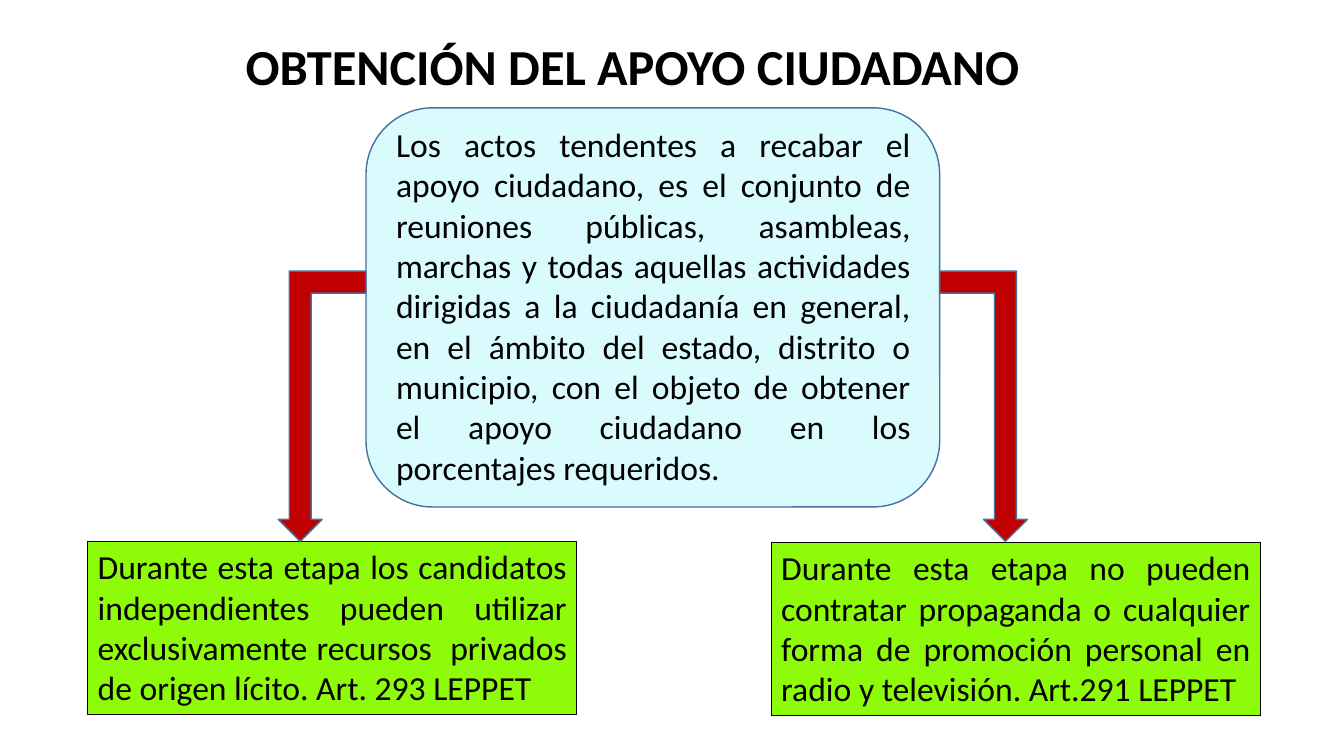
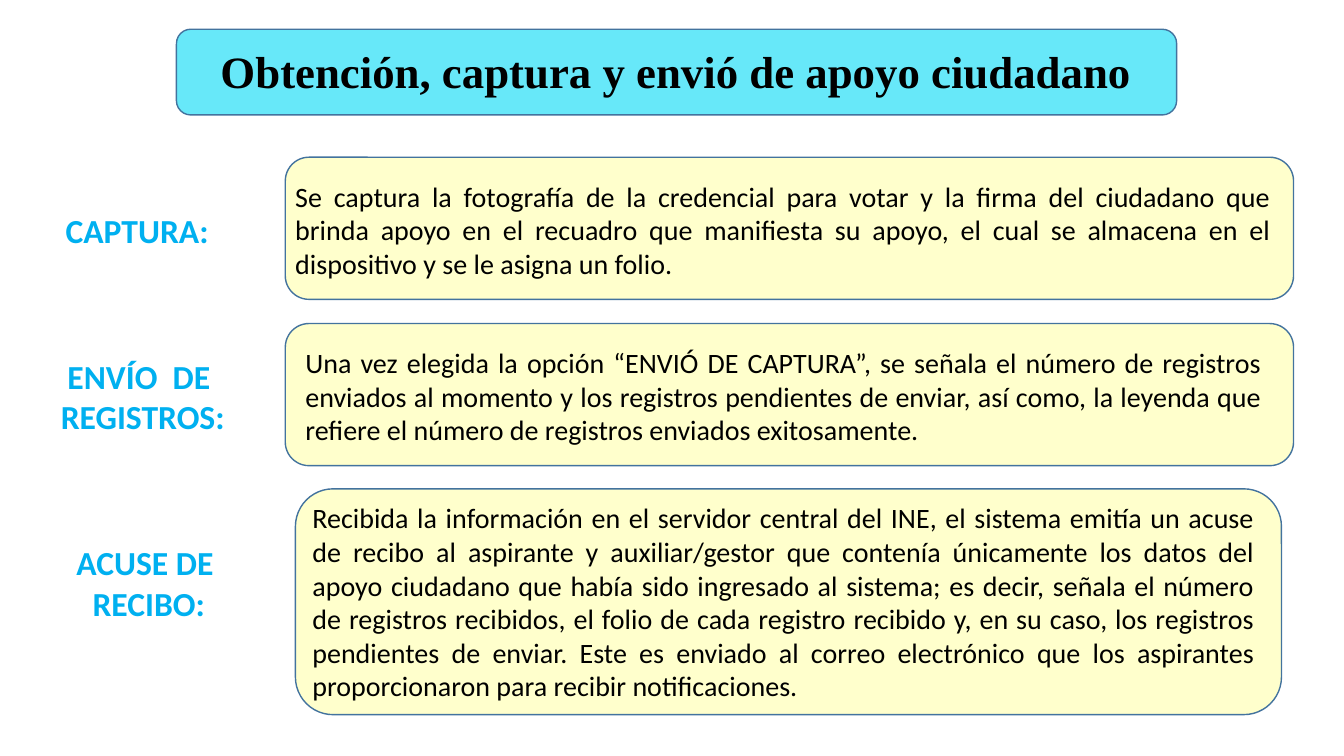
from dataclasses import dataclass

from pptx import Presentation
from pptx import util as u
from pptx.dml import color
from pptx.enum import shapes, text


@dataclass(frozen=True)
class Theme:
    ink: str = "000000"
    outline: str = "43739E"
    pale_blue: str = "DAFBFE"
    cyan: str = "67E8F9"
    cream: str = "FFFFCC"
    green: str = "8EFC08"
    red: str = "C00000"
    label_blue: str = "00B0F0"
    body_font: str = "Calibri"
    banner_font: str = "Times New Roman"
    title_size: int = 36
    banner_size: int = 32
    large_size: int = 24
    body_size: int = 20


class Deck:
    def __init__(self, theme):
        self.theme = theme
        self.prs = Presentation()
        self.prs.slide_width = u.Inches(13.33)
        self.prs.slide_height = u.Inches(7.5)
        self.slide = None

    def new_slide(self):
        self.slide = self.prs.slides.add_slide(self.prs.slide_layouts[5])

    def set_words(self, frame, words, size, align, ink=None, font=None, bold=False):
        frame.word_wrap = True
        frame.auto_size = text.MSO_AUTO_SIZE.NONE
        frame.vertical_anchor = text.MSO_ANCHOR.TOP
        paragraph = frame.paragraphs[0]
        paragraph.alignment = align
        run = paragraph.add_run()
        run.text = words
        run.font.size = u.Pt(size)
        run.font.name = font or self.theme.body_font
        run.font.bold = bold
        run.font.color.rgb = color.RGBColor.from_string(ink or self.theme.ink)

    def title(self, box, words, size, font=None, banner=None):
        heading = self.slide.shapes.title
        heading.left, heading.top, heading.width, heading.height = map(u.Inches, box)
        if banner:
            band = self.panel(banner, self.theme.cyan)
            band._element.addnext(heading._element)
        self.set_words(heading.text_frame, words, size, text.PP_ALIGN.CENTER,
                       font=font, bold=True)

    def panel(self, box, fill, outline=None, weight=1,
              kind=shapes.MSO_SHAPE.ROUNDED_RECTANGLE):
        panel = self.slide.shapes.add_shape(kind, *map(u.Inches, box))
        panel.shadow.inherit = False
        panel.fill.solid()
        panel.fill.fore_color.rgb = color.RGBColor.from_string(fill)
        panel.line.color.rgb = color.RGBColor.from_string(outline or self.theme.outline)
        panel.line.width = u.Pt(weight)
        return panel

    def body(self, box, words, size):
        area = self.slide.shapes.add_textbox(*map(u.Inches, box))
        self.set_words(area.text_frame, words, size, text.PP_ALIGN.JUSTIFY)

    def label(self, box, words):
        area = self.slide.shapes.add_textbox(*map(u.Inches, box))
        self.set_words(area.text_frame, words, self.theme.large_size,
                       text.PP_ALIGN.CENTER, ink=self.theme.label_blue, bold=True)

    def rule(self, box, words):
        card = self.panel(box, self.theme.green, self.theme.ink, 0.75,
                          shapes.MSO_SHAPE.RECTANGLE)
        self.set_words(card.text_frame, words, self.theme.large_size,
                       text.PP_ALIGN.JUSTIFY)

    def down_arrow(self, box, mirrored):
        arrow = self.panel(box, self.theme.red, kind=shapes.MSO_SHAPE.BENT_UP_ARROW)
        arrow.rotation = 180
        if mirrored:
            arrow._element.spPr.xfrm.set("flipH", "1")


def support_slide(deck):
    deck.new_slide()
    left, top, width, height = definition = (3.63, 1.07, 5.69, 3.96)
    arrow_width, arrow_top, arrow_height = 0.87, 2.69, 2.68
    deck.panel(definition, deck.theme.pale_blue)
    deck.title((1.93, 0.3, 8.69, 0.71), "OBTENCIÓN DEL APOYO CIUDADANO",
               deck.theme.title_size)
    rules = (
        (0.87, 5.37, left - arrow_width, False,
         "Durante esta etapa los candidatos independientes pueden utilizar "
         "exclusivamente recursos  privados de origen lícito. Art. 293 LEPPET"),
        (7.65, 5.38, left + width, True,
         "Durante esta etapa no pueden contratar propaganda o cualquier forma de "
         "promoción personal en radio y televisión. Art.291 LEPPET"),
    )
    for rule_left, rule_top, arrow_left, mirrored, words in rules:
        deck.rule((rule_left, rule_top, 4.85, 1.72), words)
        deck.down_arrow((arrow_left, arrow_top, arrow_width, arrow_height), mirrored)
    deck.body((3.83, 1.18, 5.3, 3.74),
              "Los actos tendentes a recabar el apoyo ciudadano, es el conjunto de "
              "reuniones públicas, asambleas, marchas y todas aquellas actividades "
              "dirigidas a la ciudadanía en general, en el ámbito del estado, distrito "
              "o municipio, con el objeto de obtener el apoyo ciudadano en los "
              "porcentajes requeridos.", deck.theme.large_size)


def process_slide(deck):
    deck.new_slide()
    deck.title((2.02, 0.38, 9.37, 0.64),
               "Obtención, captura y envió de apoyo ciudadano",
               deck.theme.banner_size, deck.theme.banner_font,
               banner=(1.75, 0.29, 9.92, 0.85))
    steps = (
        ("CAPTURA:", (0.5, 2.03, 1.72, 0.5),
         (2.83, 1.56, 10, 1.41), (2.83, 1.73, 9.87, 1.11),
         "Se captura la fotografía de la credencial para votar y la firma del "
         "ciudadano que brinda apoyo en el recuadro que manifiesta su apoyo, el cual "
         "se almacena en el dispositivo y se le asigna un folio."),
        ("ENVÍO  DE  REGISTROS:", (0.44, 3.48, 1.95, 0.91),
         (2.83, 3.21, 10, 1.41), (2.93, 3.38, 9.68, 1.11),
         "Una vez elegida la opción “ENVIÓ DE CAPTURA”, se señala el número de "
         "registros enviados al momento y los registros pendientes de enviar, así "
         "como, la leyenda que refiere el número de registros enviados exitosamente."),
        ("ACUSE DE  RECIBO:", (0.5, 5.33, 1.95, 0.91),
         (2.93, 4.85, 9.78, 2.24), (3, 4.92, 9.54, 2.12),
         "Recibida la información en el servidor central del INE, el sistema emitía "
         "un acuse de recibo al aspirante y auxiliar/gestor que contenía únicamente "
         "los datos del apoyo ciudadano que había sido ingresado al sistema; es "
         "decir, señala el número de registros recibidos, el folio de cada registro "
         "recibido y, en su caso, los registros pendientes de enviar. Este es enviado "
         "al correo electrónico que los aspirantes proporcionaron para recibir "
         "notificaciones."),
    )
    for step, label_box, panel_box, body_box, words in steps:
        deck.panel(panel_box, deck.theme.cream)
        deck.body(body_box, words, deck.theme.body_size)
        deck.label(label_box, step)


def main():
    deck = Deck(Theme())
    support_slide(deck)
    process_slide(deck)
    deck.prs.save("out.pptx")


if __name__ == "__main__":
    main()
